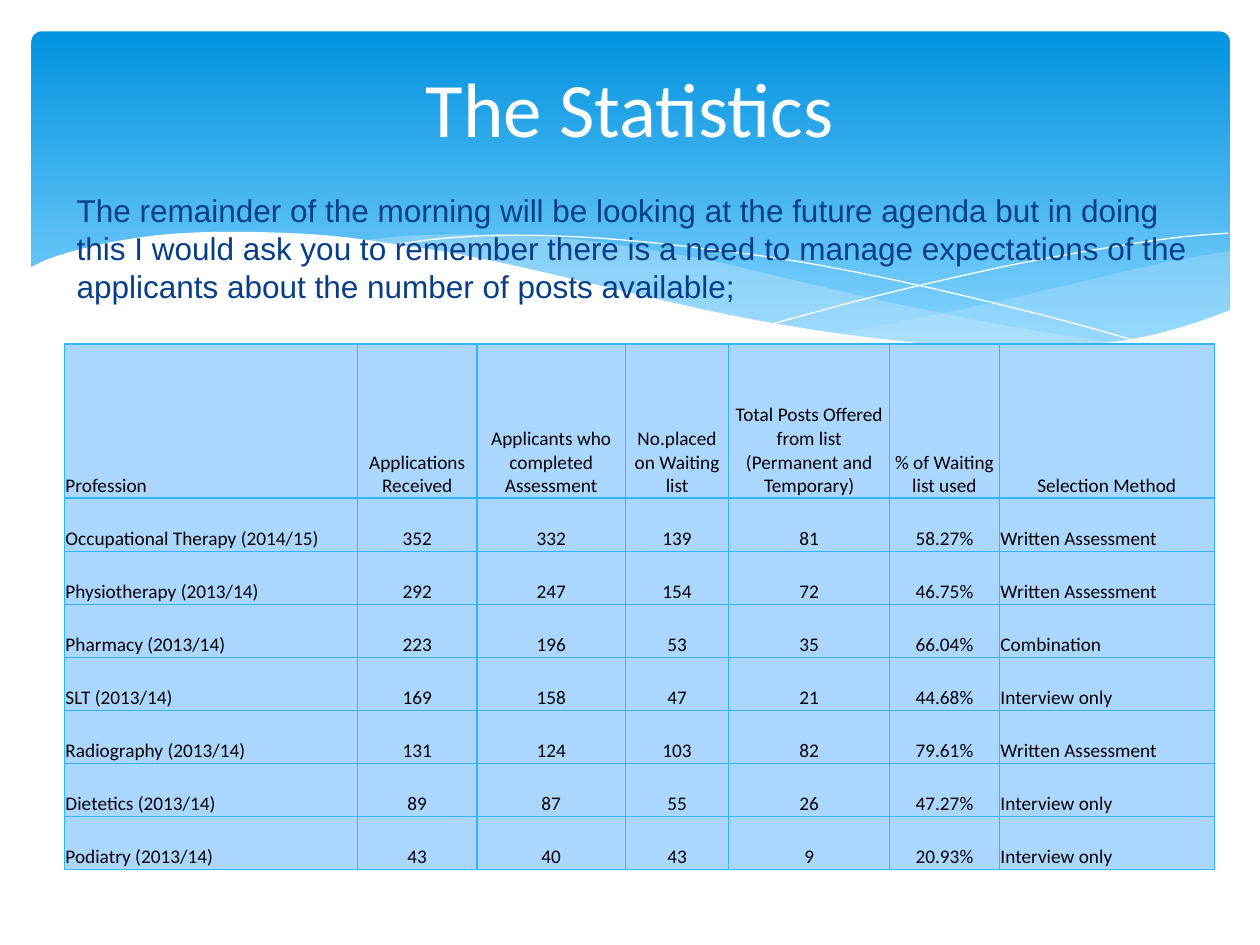
"""Build the statistics slide: a wave banner, a lead paragraph and a table of applicants."""
from dataclasses import dataclass
from typing import Optional

from lxml import etree
from pptx import Presentation
from pptx.dml.color import RGBColor
from pptx.enum.shapes import MSO_SHAPE
from pptx.enum.text import MSO_ANCHOR, PP_ALIGN
from pptx.oxml.ns import qn
from pptx.util import Emu, Inches, Pt

ROUNDED = MSO_SHAPE.ROUNDED_RECTANGLE
MIDDLE, BOTTOM = MSO_ANCHOR.MIDDLE, MSO_ANCHOR.BOTTOM
LEFT, CENTER = PP_ALIGN.LEFT, PP_ALIGN.CENTER
WIDTH, HEIGHT = Inches(10), Inches(7.5)
TITLE_ONLY = 5
CURVE_STEPS = 6

Point = tuple[float, float]


@dataclass(frozen=True)
class Theme:
    """Colours, fonts and type sizes."""
    band_top: str = "0293E0"
    band_bottom: str = "83D3FE"
    mist: str = "C6E7FC"
    white: str = "FFFFFF"
    lead: str = "073E87"
    cell: str = "ABD7FF"
    border: str = "31B6FD"
    ink: str = "000000"
    heading_font: str = "Calibri"
    lead_font: str = "Arial"
    title_size: float = 44
    lead_size: float = 18
    table_size: float = 11
    border_width: float = 0.75


@dataclass(frozen=True)
class Box:
    """A place given in percent of the slide's width and height."""
    left: float
    top: float
    width: float
    height: float

    def frame(self) -> tuple[Emu, Emu, Emu, Emu]:
        """Return left, top, width and height as lengths."""
        return (Emu(int(WIDTH * self.left / 100)), Emu(int(HEIGHT * self.top / 100)),
                Emu(int(WIDTH * self.width / 100)), Emu(int(HEIGHT * self.height / 100)))


@dataclass(frozen=True)
class Wave:
    """An outline of smooth edges in inches, filled or drawn as a hairline."""
    edges: tuple[tuple[Point, ...], ...]
    fill: Optional[str] = None
    opacity: int = 100


THEME = Theme()
BAND = Box(2.5, 3.33, 95.1, 36)
TITLE = Box(5, 5, 90, 12.5)
LEAD = Box(5.1, 19.6, 91.3, 13.5)
TABLE = Box(5.1, 36.4, 91.3, 55.6)
LEAD_TEXT = ("The remainder of the morning will be looking at the future agenda but in doing this "
             "I would ask you to remember there is a need to manage expectations of the applicants "
             "about the number of posts available;")

WAVES = (
    Wave((((9.76, 1.99), (9.21, 2.09), (8.61, 2.23), (7.79, 2.42), (7.06, 2.57), (6.61, 2.65)),
          ((6.61, 2.65), (7.18, 2.72), (7.69, 2.77), (8.14, 2.78), (8.63, 2.75), (9.05, 2.69),
           (9.42, 2.59), (9.76, 2.47))), THEME.mist, 29),
    Wave((((8.93, 2.73), (8.37, 2.65), (7.75, 2.54), (7.06, 2.4), (6.29, 2.22), (5.69, 2.08),
           (5.14, 1.98), (4.65, 1.91), (4.2, 1.87), (3.8, 1.86), (3.28, 1.87), (2.86, 1.91)),
          ((2.86, 1.91), (3.42, 1.99), (4.04, 2.11), (4.91, 2.32), (5.66, 2.48), (6.34, 2.61),
           (6.95, 2.7), (7.48, 2.76), (7.96, 2.78), (8.48, 2.77), (8.93, 2.73))),
         THEME.mist, 40),
    Wave((((3.09, 1.95), (3.44, 1.9), (3.87, 1.87), (4.33, 1.87), (4.89, 1.9), (5.56, 1.97),
           (6.36, 2.08), (7.27, 2.26), (8.31, 2.51), (9.07, 2.72)),)),
    Wave((((6.13, 2.57), (6.95, 2.35), (7.76, 2.16), (8.36, 2.04), (8.95, 1.94), (9.38, 1.88),
           (9.75, 1.85)),)),
    Wave((((9.77, 2.46), (9.4, 2.59), (8.99, 2.69), (8.5, 2.75), (8.09, 2.77), (7.61, 2.75),
           (7.08, 2.7), (6.47, 2.62), (5.79, 2.5), (5.03, 2.33), (4.18, 2.13), (3.65, 2.02),
           (3.15, 1.94), (2.71, 1.88), (2.3, 1.85), (1.77, 1.84), (1.32, 1.86), (0.95, 1.91),
           (0.67, 1.97), (0.4, 2.05), (0.23, 2.13)),
          ((0.23, 3.29), (9.77, 3.29))), THEME.white),
)

COLUMN_SHARES = (2.33, 0.95, 1.18, 0.82, 1.28, 0.87, 1.71)
ROW_SHARES = (1.22,) + (0.42,) * 7
ROWS = (
    ("Profession", "Applications Received", "Applicants who completed Assessment",
     "No.placed on Waiting list", "Total Posts Offered from list (Permanent and Temporary)",
     "% of Waiting list used", "Selection Method"),
    ("Occupational Therapy (2014/15)", "352", "332", "139", "81", "58.27%", "Written Assessment"),
    ("Physiotherapy (2013/14)", "292", "247", "154", "72", "46.75%", "Written Assessment"),
    ("Pharmacy (2013/14)", "223", "196", "53", "35", "66.04%", "Combination"),
    ("SLT (2013/14)", "169", "158", "47", "21", "44.68%", "Interview only"),
    ("Radiography (2013/14)", "131", "124", "103", "82", "79.61%", "Written Assessment"),
    ("Dietetics (2013/14)", "89", "87", "55", "26", "47.27%", "Interview only"),
    ("Podiatry (2013/14)", "43", "40", "43", "9", "20.93%", "Interview only"),
)


def apply(target, values: dict) -> None:
    """Set each named attribute on the target."""
    for name, value in values.items():
        setattr(target, name, value)


def write(frame, text: str, font: str, size: float, color: str, align=LEFT) -> None:
    """Fill a text frame with one formatted paragraph."""
    paragraph = frame.paragraphs[0]
    paragraph.alignment = align
    run = paragraph.add_run()
    run.text = text
    apply(run.font, {"name": font, "size": Pt(size), "bold": False})
    run.font.color.rgb = RGBColor.from_string(color)


def smooth(anchors: tuple[Point, ...]) -> list[Point]:
    """Sample a Catmull-Rom curve through the anchors."""
    if len(anchors) < 3:
        return list(anchors)
    padded = (anchors[0], *anchors, anchors[-1])
    points = [anchors[0]]
    for a, b, c, d in zip(padded, padded[1:], padded[2:], padded[3:]):
        for step in range(1, CURVE_STEPS + 1):
            t = step / CURVE_STEPS
            points.append(tuple(
                (2 * q + (r - p) * t + (2 * p - 5 * q + 4 * r - s) * t ** 2
                 + (3 * q - p - 3 * r + s) * t ** 3) / 2
                for p, q, r, s in zip(a, b, c, d)))
    return points


def add_band(slide) -> None:
    """Draw the rounded gradient banner."""
    band = slide.shapes.add_shape(ROUNDED, *BAND.frame())
    band.adjustments[0] = 0.03
    band.shadow.inherit = False
    band.line.fill.background()
    band.fill.gradient()
    band.fill.gradient_angle = 270
    stops = ((0, THEME.band_top), (0.9, THEME.band_bottom))
    for stop, (position, color) in zip(band.fill.gradient_stops, stops):
        stop.position = position
        stop.color.rgb = RGBColor.from_string(color)


def add_wave(slide, wave: Wave) -> None:
    """Draw one wave as a filled outline or an open hairline."""
    points = [(Inches(x), Inches(y)) for edge in wave.edges for x, y in smooth(edge)]
    builder = slide.shapes.build_freeform(*points[0])
    builder.add_line_segments(points[1:], close=wave.fill is not None)
    shape = builder.convert_to_shape()
    shape.shadow.inherit = False
    if wave.fill is None:
        shape.fill.background()
        shape.line.color.rgb = RGBColor.from_string(THEME.white)
        shape.line.width = Pt(0)
        return
    shape.line.fill.background()
    shape.fill.solid()
    shape.fill.fore_color.rgb = RGBColor.from_string(wave.fill)
    if wave.opacity < 100:
        color = shape.element.spPr.find(qn("a:solidFill")).find(qn("a:srgbClr"))
        etree.SubElement(color, qn("a:alpha"), val=str(wave.opacity * 1000))


def add_borders(cell) -> None:
    """Outline all four sides of a cell."""
    properties = cell._tc.get_or_add_tcPr()
    for side in ("lnL", "lnR", "lnT", "lnB"):
        line = etree.SubElement(properties, qn(f"a:{side}"), w=str(Pt(THEME.border_width)))
        fill = etree.SubElement(line, qn("a:solidFill"))
        etree.SubElement(fill, qn("a:srgbClr"), val=THEME.border)


def add_statistics(slide) -> None:
    """Draw the table of applicants by profession."""
    frame = TABLE.frame()
    table = slide.shapes.add_table(len(ROWS), len(COLUMN_SHARES), *frame).table
    apply(table, {"first_row": False, "horz_banding": False})
    for column, share in zip(table.columns, COLUMN_SHARES):
        column.width = Emu(int(frame[2] * share / sum(COLUMN_SHARES)))
    for row, share in zip(table.rows, ROW_SHARES):
        row.height = Emu(int(frame[3] * share / sum(ROW_SHARES)))
    inset = Inches(0.01)
    cell_format = {"margin_left": inset, "margin_right": inset, "margin_top": inset,
                   "margin_bottom": 0, "vertical_anchor": BOTTOM}
    last = len(COLUMN_SHARES) - 1
    for i, texts in enumerate(ROWS):
        for j, text in enumerate(texts):
            cell = table.cell(i, j)
            apply(cell, cell_format)
            add_borders(cell)
            cell.fill.solid()
            cell.fill.fore_color.rgb = RGBColor.from_string(THEME.cell)
            centred = 0 < j < last or (i == 0 and j == last)
            write(cell.text_frame, text, THEME.heading_font, THEME.table_size, THEME.ink,
                  CENTER if centred else LEFT)


def add_title(slide) -> None:
    """Place the title placeholder in front of the banner."""
    title = slide.shapes.title
    title.element.getparent().append(title.element)
    apply(title, dict(zip(("left", "top", "width", "height"), TITLE.frame())))
    title.text_frame.vertical_anchor = MIDDLE
    write(title.text_frame, "The Statistics", THEME.heading_font, THEME.title_size, THEME.white, CENTER)


def main() -> None:
    """Assemble and save the slide."""
    presentation = Presentation()
    apply(presentation, {"slide_width": WIDTH, "slide_height": HEIGHT})
    slide = presentation.slides.add_slide(presentation.slide_layouts[TITLE_ONLY])
    add_band(slide)
    for wave in WAVES:
        add_wave(slide, wave)
    add_title(slide)
    lead = slide.shapes.add_textbox(*LEAD.frame())
    lead.text_frame.word_wrap = True
    write(lead.text_frame, LEAD_TEXT, THEME.lead_font, THEME.lead_size, THEME.lead)
    add_statistics(slide)
    presentation.save("out.pptx")


if __name__ == "__main__":
    main()
